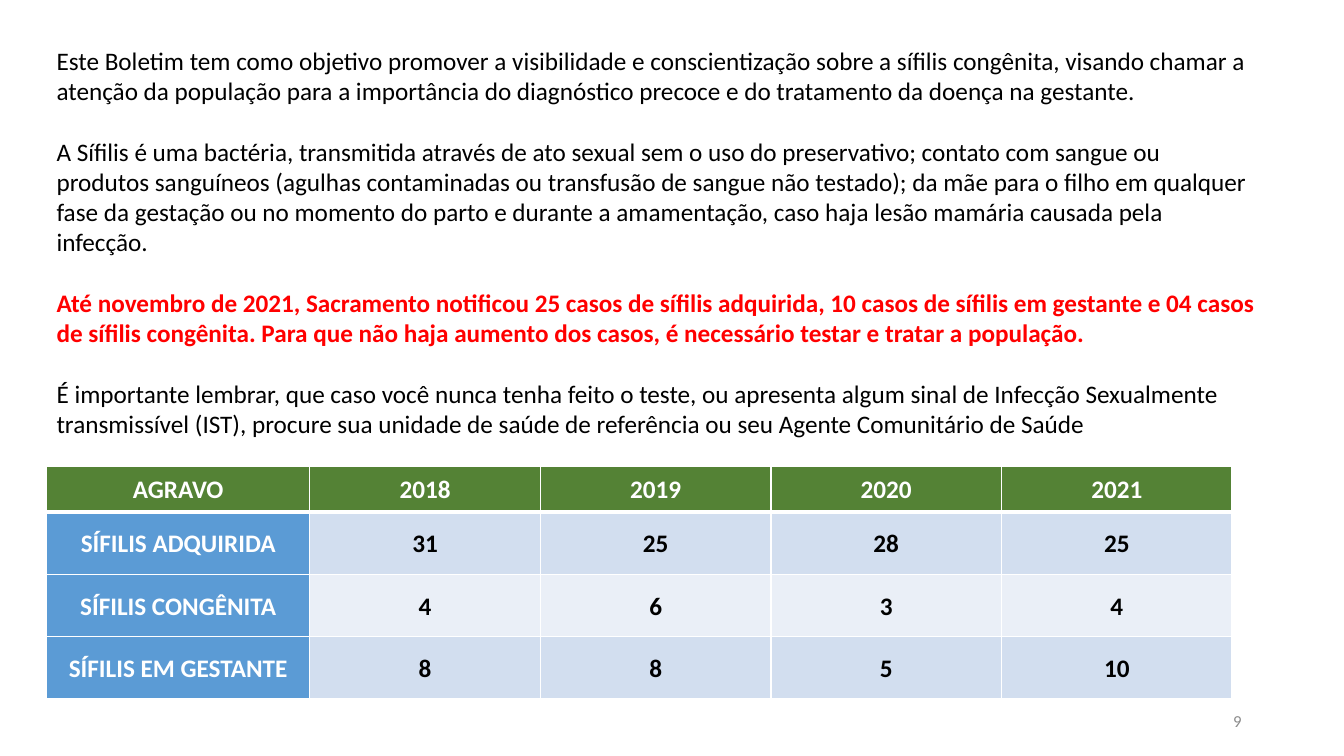
from pptx import Presentation
from pptx.dml.color import RGBColor
from pptx.enum.text import MSO_ANCHOR as Anchor, PP_ALIGN as Align
from pptx.oxml import parse_xml
from pptx.oxml.ns import nsdecls
from pptx.util import Pt

WHITE = RGBColor(0xFF, 0xFF, 0xFF)
BLACK = RGBColor(0, 0, 0)
RED = RGBColor(0xFF, 0, 0)
GRAY = RGBColor(0x8C, 0x8C, 0x8C)
GREEN = RGBColor(0x54, 0x82, 0x35)
BLUE = RGBColor(0x5B, 0x9B, 0xD5)
BANDS = (RGBColor(0xD2, 0xDE, 0xEF), RGBColor(0xEA, 0xEF, 0xF7))

PARAGRAPHS = [
    ("Este Boletim tem como objetivo promover a visibilidade e conscientização sobre a sífilis "
     "congênita, visando chamar a atenção da população para a importância do diagnóstico precoce "
     "e do tratamento da doença na gestante.", BLACK, False),
    ("A Sífilis é uma bactéria, transmitida através de ato sexual sem o uso do preservativo; "
     "contato com sangue ou produtos sanguíneos (agulhas contaminadas ou transfusão de sangue "
     "não testado); da mãe para o filho em qualquer fase da gestação ou no momento do parto e "
     "durante a amamentação, caso haja lesão mamária causada pela infecção.", BLACK, False),
    ("Até novembro de 2021, Sacramento notificou 25 casos de sífilis adquirida, 10 casos de "
     "sífilis em gestante e 04 casos de sífilis congênita. Para que não haja aumento dos casos, "
     "é necessário testar e tratar a população.", RED, True),
    ("É importante lembrar, que caso você nunca tenha feito o teste, ou apresenta algum sinal de "
     "Infecção Sexualmente transmissível (IST), procure sua unidade de saúde de referência ou "
     "seu Agente Comunitário de Saúde", BLACK, False),
]

CASES = [
    ("AGRAVO", "2018", "2019", "2020", "2021"),
    ("SÍFILIS ADQUIRIDA", "31", "25", "28", "25"),
    ("SÍFILIS CONGÊNITA", "4", "6", "3", "4"),
    ("SÍFILIS EM GESTANTE", "8", "8", "5", "10"),
]


class SlideBuilder:
    font_name = "Calibri"
    text_size = 18

    def __init__(self, page):
        self.page = page

    def style(self, para, color, bold=False, size=text_size, align=Align.LEFT):
        para.alignment = align
        for span in para.runs:
            span.font.name = self.font_name
            span.font.size = Pt(size)
            span.font.bold = bold
            span.font.color.rgb = color

    def text(self, left, top, width, height, items, size=text_size, align=Align.LEFT,
             anchor=Anchor.TOP, gap=21.6):
        box = self.page.shapes.add_textbox(Pt(left), Pt(top), Pt(width), Pt(height))
        frame = box.text_frame
        frame.word_wrap = True
        frame.vertical_anchor = anchor
        for index, (words, color, bold) in enumerate(items):
            para = frame.add_paragraph() if index else frame.paragraphs[0]
            para.text = words
            para.space_before = Pt(gap if index else 0)
            self.style(para, color, bold, size, align)

    def borders(self, cell, widths):
        properties = cell._tc.get_or_add_tcPr()
        for position, (side, width) in enumerate(widths.items()):
            line = parse_xml(
                f'<a:ln{side} {nsdecls("a")} w="{Pt(width)}"><a:solidFill>'
                f'<a:srgbClr val="{WHITE}"/></a:solidFill></a:ln{side}>')
            properties.insert(position, line)

    def table(self, left, top, column_widths, row_heights, rows):
        table = self.page.shapes.add_table(
            len(rows), len(column_widths), Pt(left), Pt(top),
            Pt(sum(column_widths)), Pt(sum(row_heights))).table
        for column, width in zip(table.columns, column_widths):
            column.width = Pt(width)
        for r, (row, height) in enumerate(zip(rows, row_heights)):
            table.rows[r].height = Pt(height)
            for c, words in enumerate(row):
                heading = r == 0 or c == 0
                cell = table.cell(r, c)
                cell.text = words
                cell.vertical_anchor = Anchor.MIDDLE
                cell.margin_left = cell.margin_right = Pt(5)
                cell.margin_top = cell.margin_bottom = 0
                cell.fill.solid()
                cell.fill.fore_color.rgb = (
                    GREEN if r == 0 else BLUE if c == 0 else BANDS[(r - 1) % 2])
                self.borders(cell, {"L": 1, "R": 1, "T": 3 if r == 1 else 1,
                                    "B": 3 if r == 0 else 1})
                para = cell.text_frame.paragraphs[0]
                para.line_spacing = 1.07
                self.style(para, WHITE if heading else BLACK, True, align=Align.CENTER)


def main():
    deck = Presentation()
    deck.slide_width, deck.slide_height = Pt(960), Pt(540)
    builder = SlideBuilder(deck.slides.add_slide(deck.slide_layouts[6]))

    # Introduction
    builder.text(33.3, 28.8, 871, 334, PARAGRAPHS)

    # Cases per year
    builder.table(33.3, 333.4, [188] + [164.7] * 4, [32.2] + [44.6] * 3, CASES)

    # Page number
    builder.text(678, 500.4, 216, 28.8, [("9", GRAY, False)], 12, Align.RIGHT, Anchor.MIDDLE)

    deck.save("out.pptx")


if __name__ == "__main__":
    main()
